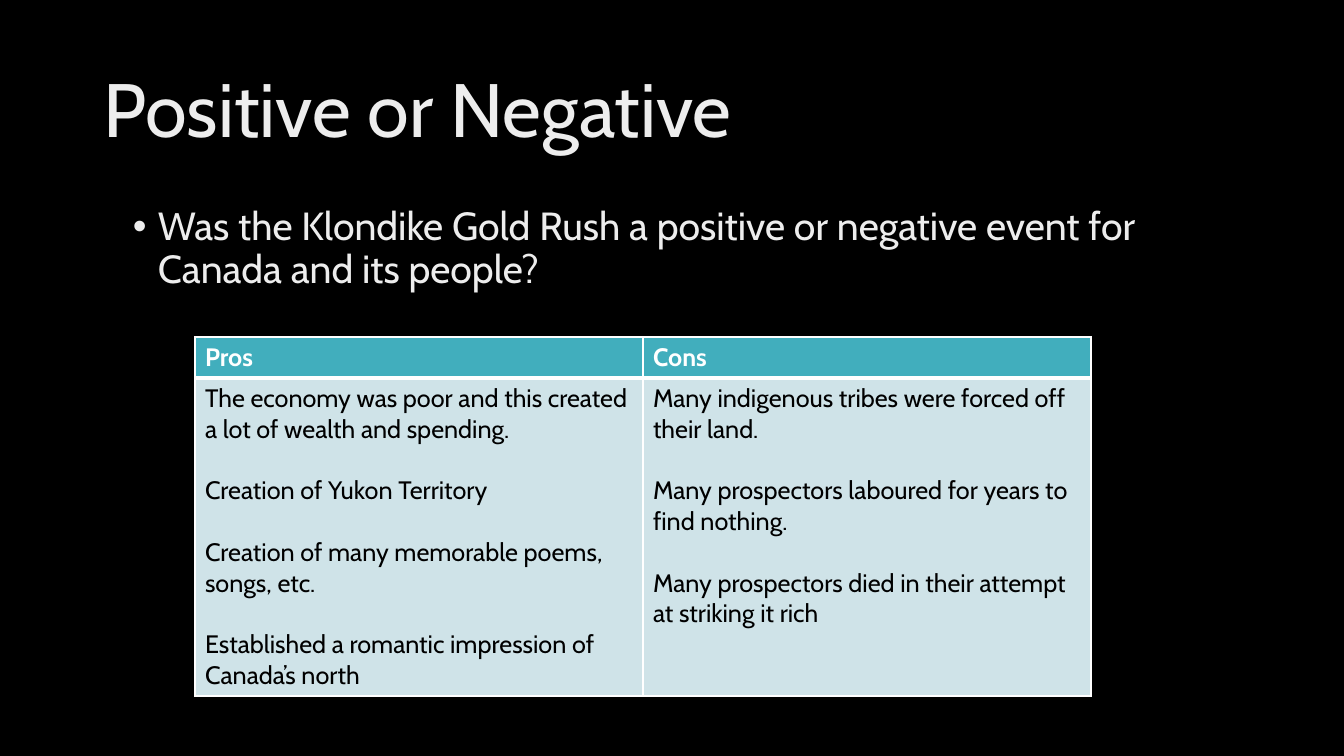
from lxml.etree import SubElement
from pptx import Presentation
from pptx.dml.color import RGBColor
from pptx.enum.text import MSO_ANCHOR, MSO_AUTO_SIZE
from pptx.oxml.ns import qn
from pptx.util import Pt

EMU_PER_PX = 914400 / 100.8
FONT = "Cabin"
BLACK = RGBColor(0x00, 0x00, 0x00)
WHITE = RGBColor(0xFF, 0xFF, 0xFF)
SILVER = RGBColor(0xED, 0xED, 0xED)
TEAL = RGBColor(0x41, 0xAE, 0xBD)
PALE_TEAL = RGBColor(0xCF, 0xE3, 0xE8)

QUESTION = ("Was the Klondike Gold Rush a positive or negative event for "
            "Canada and its people?")
ARGUMENTS = {
    "Pros": [
        "The economy was poor and this created a lot of wealth and spending.",
        "Creation of Yukon Territory",
        "Creation of many memorable poems, songs, etc.",
        "Established a romantic impression of Canada’s north",
    ],
    "Cons": [
        "Many indigenous tribes were forced off their land.",
        "Many prospectors laboured for years to find nothing.",
        "Many prospectors died in their attempt at striking it rich",
    ],
}


def px(length):
    return round(length * EMU_PER_PX)


def write_text(text_frame, texts, size, color, bold=False, line_spacing=None,
               gap=0, bullet=None, indent=0):
    """Fill the frame with one paragraph per text, gap points apart."""
    text_frame.word_wrap = True
    for index, text in enumerate(texts):
        paragraph = text_frame.paragraphs[0] if index == 0 else text_frame.add_paragraph()
        if bullet:
            properties = paragraph._p.get_or_add_pPr()
            properties.set("marL", str(px(indent)))
            properties.set("indent", str(-px(indent)))
            SubElement(properties, qn("a:buFont"), typeface="Arial")
            SubElement(properties, qn("a:buChar"), char=bullet)
        if line_spacing:
            paragraph.line_spacing = line_spacing
        if index:
            paragraph.space_before = Pt(gap)
        run = paragraph.add_run()
        run.text = text
        run.font.name = FONT
        run.font.size = Pt(size)
        run.font.bold = bold
        run.font.color.rgb = color


def set_borders(cell, **widths):
    """Draw white borders, given in points by side: L, R, T, B."""
    properties = cell._tc.get_or_add_tcPr()
    for index, (side, width) in enumerate(widths.items()):
        line = properties.makeelement(qn(f"a:ln{side}"), {"w": str(Pt(width))})
        fill = SubElement(line, qn("a:solidFill"))
        SubElement(fill, qn("a:srgbClr"), val=str(WHITE))
        properties.insert(index, line)


def add_title(slide, left, top, width, height):
    title = slide.shapes.title
    title.left, title.top, title.width, title.height = map(px, (left, top, width, height))
    title.text_frame.vertical_anchor = MSO_ANCHOR.MIDDLE
    title.text_frame.auto_size = MSO_AUTO_SIZE.NONE
    write_text(title.text_frame, ["Positive or Negative"], size=54, color=SILVER,
               line_spacing=0.9)
    title.text_frame.paragraphs[0].alignment = 1


def add_question(slide, left, top, width, height):
    box = slide.shapes.add_textbox(*map(px, (left, top, width, height)))
    write_text(box.text_frame, [QUESTION], size=28, color=SILVER,
               line_spacing=0.9, bullet="•", indent=25)


def add_arguments_table(slide, left, top, width, height, header_height):
    frame = slide.shapes.add_table(2, len(ARGUMENTS), *map(px, (left, top, width, height)))
    table = frame.table
    table.rows[0].height = px(header_height)
    table.rows[1].height = px(height - header_height)
    for column, (heading, points) in enumerate(ARGUMENTS.items()):
        header, body = table.cell(0, column), table.cell(1, column)
        write_text(header.text_frame, [heading], size=18, color=WHITE, bold=True)
        write_text(body.text_frame, points, size=18, color=BLACK, gap=22)
        for cell, color, bottom, cell_top in ((header, TEAL, 3, 1), (body, PALE_TEAL, 1, 3)):
            cell.fill.solid()
            cell.fill.fore_color.rgb = color
            set_borders(cell, L=1, R=1, T=cell_top, B=bottom)


def build_slide(presentation):
    slide = presentation.slides.add_slide(presentation.slide_layouts[5])
    slide.background.fill.solid()
    slide.background.fill.fore_color.rgb = BLACK
    add_title(slide, 93, 40, 1159, 146)
    add_question(slide, 123, 202, 1128, 100)
    add_arguments_table(slide, 195, 337, 896, 359, header_height=41)


def main():
    presentation = Presentation()
    presentation.slide_width, presentation.slide_height = px(1344), px(756)
    build_slide(presentation)
    presentation.save("out.pptx")


if __name__ == "__main__":
    main()
